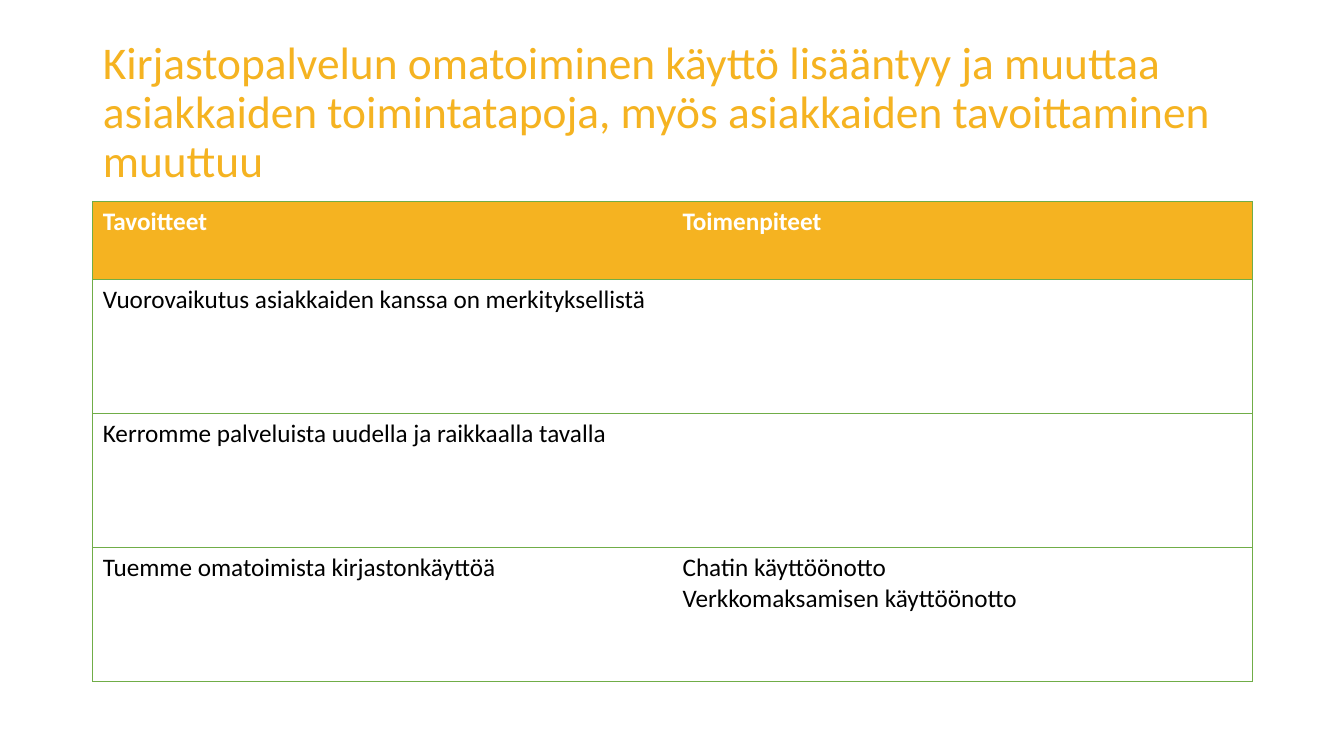
from pptx import Presentation
from pptx.dml.color import RGBColor
from pptx.enum.text import MSO_ANCHOR, MSO_AUTO_SIZE, PP_ALIGN
from pptx.util import Inches, Pt
from lxml.etree import SubElement
from pptx.oxml.ns import qn

HUES = {"gold": "F5B321", "green": "70AD47", "white": "FFFFFF", "black": "000000"}
TITLE = ("Kirjastopalvelun omatoiminen käyttö lisääntyy ja muuttaa asiakkaiden "
         "toimintatapoja, myös asiakkaiden tavoittaminen muuttuu")
ROWS = [
    (["Tavoitteet"], ["Toimenpiteet"]),
    (["Vuorovaikutus asiakkaiden kanssa on merkityksellistä"], []),
    (["Kerromme palveluista uudella ja raikkaalla tavalla"], []),
    (["Tuemme omatoimista kirjastonkäyttöä"],
     ["Chatin käyttöönotto", "Verkkomaksamisen käyttöönotto"]),
]
LEFT, WIDTH = 0.92, 11.5


class Page:
    """Holds the style and the current slide."""

    def __init__(self, deck, font="Calibri"):
        self.font = font
        self.slide = deck.slides.add_slide(deck.slide_layouts[5])

    def hue(self, name):
        return RGBColor.from_string(HUES[name])

    def run(self, para, text, size, hue, bold=False):
        run = para.add_run()
        run.text = text
        run.font.name = self.font
        run.font.size = Pt(size)
        run.font.bold = bold
        run.font.color.rgb = self.hue(hue)

    def title(self, text, box, size, hue):
        shape = self.slide.shapes.title
        shape.left, shape.top, shape.width, shape.height = map(Inches, box)
        frame = shape.text_frame
        frame.word_wrap = True
        frame.auto_size = MSO_AUTO_SIZE.NONE
        frame.vertical_anchor = MSO_ANCHOR.MIDDLE
        para = frame.paragraphs[0]
        para.alignment = PP_ALIGN.LEFT
        para.line_spacing = 0.9
        self.run(para, text, size, hue)

    def edge(self, cell, side, hue=None):
        props = cell._tc.get_or_add_tcPr()
        line = SubElement(props, qn(f"a:ln{side}"), w=str(Pt(1)))
        if hue:
            fill = SubElement(line, qn("a:solidFill"))
            SubElement(fill, qn("a:srgbClr"), val=HUES[hue])
        else:
            SubElement(line, qn("a:noFill"))

    def cell(self, cell, lines, head, outer):
        for side in "LRTB":
            inner = side in "LR" and side != outer
            self.edge(cell, side, None if inner else "green")
        cell.fill.solid()
        cell.fill.fore_color.rgb = self.hue("gold" if head else "white")
        frame = cell.text_frame
        for spot, line in enumerate(lines):
            para = frame.add_paragraph() if spot else frame.paragraphs[0]
            self.run(para, line, 18, "white" if head else "black", head)

    def table(self, rows, box, highs):
        count = len(rows[0])
        grid = self.slide.shapes.add_table(len(rows), count, *map(Inches, box)).table
        grid.horz_banding = False
        for col in grid.columns:
            col.width = Inches(box[2] / count)
        for r, row in enumerate(rows):
            grid.rows[r].height = Inches(highs[r])
            for c, lines in enumerate(row):
                self.cell(grid.cell(r, c), lines, r == 0, "LR"[c])


def main():
    deck = Presentation()
    deck.slide_width, deck.slide_height = Inches(13.33), Inches(7.5)
    page = Page(deck)
    page.title(TITLE, (LEFT, 0.4, WIDTH, 1.45), 32.4, "gold")
    highs = [0.77] + [1.33] * 3
    page.table(ROWS, (LEFT, 2, WIDTH, sum(highs)), highs)
    deck.save("out.pptx")


if __name__ == "__main__":
    main()
